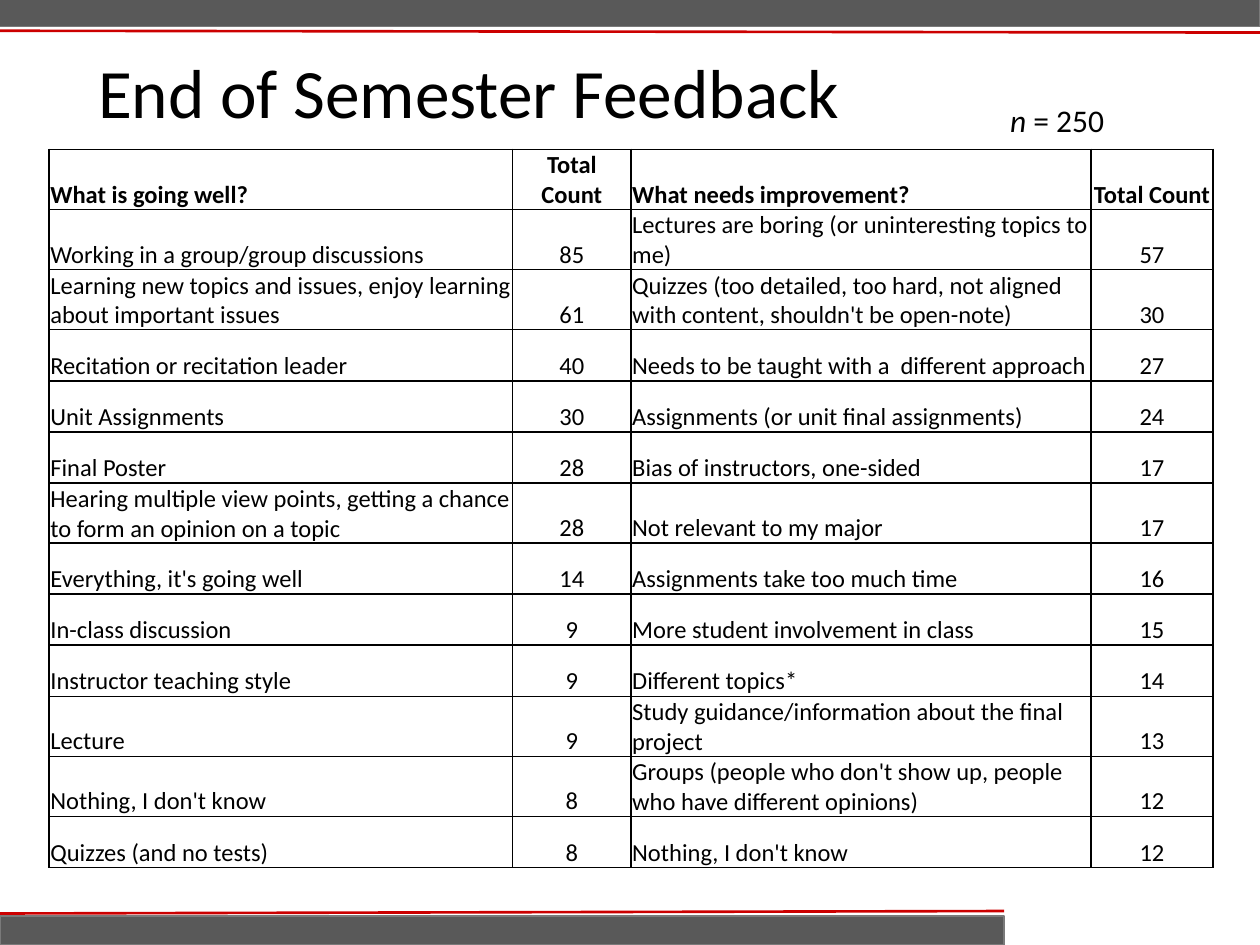
import pptx
import pptx.dml.color
import pptx.enum.shapes
import pptx.enum.text
import pptx.oxml
import pptx.oxml.ns
import pptx.util

Pt = pptx.util.Pt
ALIGN = pptx.enum.text.PP_ALIGN
ANCHOR = pptx.enum.text.MSO_ANCHOR

COLORS = {"text": "000000", "border": "000000", "band": "595959",
          "band_edge": "7A7A7A", "rule": "CC0000"}
FONT = "Calibri"

TITLE = "End of Semester Feedback"
SAMPLE_SIZE = [("n", True), (" = 250", False)]  # (text, italic)
FEEDBACK = [
    ("What is going well?", "Total Count", "What needs improvement?", "Total Count"),
    ("Working in a group/group discussions", 85,
     "Lectures are boring (or uninteresting topics to me)", 57),
    ("Learning new topics and issues, enjoy learning about important issues", 61,
     "Quizzes (too detailed, too hard, not aligned with content, shouldn't be open-note)", 30),
    ("Recitation or recitation leader", 40,
     "Needs to be taught with a  different approach", 27),
    ("Unit Assignments", 30, "Assignments (or unit final assignments)", 24),
    ("Final Poster", 28, "Bias of instructors, one-sided", 17),
    ("Hearing multiple view points, getting a chance to form an opinion on a topic", 28,
     "Not relevant to my major", 17),
    ("Everything, it's going well", 14, "Assignments take too much time", 16),
    ("In-class discussion", 9, "More student involvement in class", 15),
    ("Instructor teaching style", 9, "Different topics*", 14),
    ("Lecture", 9, "Study guidance/information about the final project", 13),
    ("Nothing, I don't know", 8,
     "Groups (people who don't show up, people who have different opinions)", 12),
    ("Quizzes (and no tests)", 8, "Nothing, I don't know", 12),
]
COLUMN_WIDTHS = [264.9, 67.6, 262.8, 69.8]
ROW_HEIGHT = 29.2
TABLE_LEFT, TABLE_TOP = 28.1, 85.4

BANDS = [(0, 523.4, 573.8, 16.6), (-0.7, -1.4, 720.7, 16.6)]  # left, top, width, height
RULES = [(-0.7, 522, 573.8, 520.6), (-0.7, 17.6, 720, 18.6)]  # from x, y to x, y


def color(name):
    return pptx.dml.color.RGBColor.from_string(COLORS[name])


def write(frame, runs, size, align=ALIGN.LEFT, bold=False, line_spacing=None):
    """Fill the first paragraph; runs is a string or (text, italic) pairs."""
    paragraph = frame.paragraphs[0]
    paragraph.alignment = align
    if line_spacing:
        paragraph.line_spacing = line_spacing
    for text, italic in [(runs, False)] if isinstance(runs, str) else runs:
        run = paragraph.add_run()
        run.text = text
        run.font.name, run.font.size = FONT, Pt(size)
        run.font.bold, run.font.italic = bold, italic
        run.font.color.rgb = color("text")


def add_band(slide, box):
    band = slide.shapes.add_shape(pptx.enum.shapes.MSO_SHAPE.RECTANGLE, *map(Pt, box))
    band.shadow.inherit = False
    band.fill.solid()
    band.fill.fore_color.rgb = color("band")
    band.line.color.rgb = color("band_edge")
    band.line.width = Pt(1)


def add_rule(slide, ends):
    rule = slide.shapes.add_connector(pptx.enum.shapes.MSO_CONNECTOR.STRAIGHT, *map(Pt, ends))
    rule.line.color.rgb = color("rule")
    rule.line.width = Pt(1.5)
    rule._element.spPr.append(pptx.oxml.parse_xml(
        f"<a:effectLst {pptx.oxml.ns.nsdecls('a')}/>"))


def add_borders(cell):
    properties = cell._tc.get_or_add_tcPr()
    for index, side in enumerate(("lnL", "lnR", "lnT", "lnB")):
        properties.insert(index, pptx.oxml.parse_xml(
            f'<a:{side} {pptx.oxml.ns.nsdecls("a")} w="{Pt(1)}"><a:solidFill>'
            f'<a:srgbClr val="{COLORS["border"]}"/></a:solidFill></a:{side}>'))


def add_feedback_table(slide):
    table = slide.shapes.add_table(
        len(FEEDBACK), len(COLUMN_WIDTHS), Pt(TABLE_LEFT), Pt(TABLE_TOP),
        Pt(sum(COLUMN_WIDTHS)), Pt(ROW_HEIGHT * len(FEEDBACK))).table
    table.horz_banding = False
    for column, width in zip(table.columns, COLUMN_WIDTHS):
        column.width = Pt(width)
    for r, entries in enumerate(FEEDBACK):
        table.rows[r].height = Pt(ROW_HEIGHT)
        for c, entry in enumerate(entries):
            cell = table.cell(r, c)
            cell.margin_left = cell.margin_right = cell.margin_top = Pt(0.7)
            cell.margin_bottom = 0
            cell.vertical_anchor = ANCHOR.BOTTOM
            cell.fill.background()
            add_borders(cell)
            write(cell.text_frame, str(entry), size=14, bold=r == 0,
                  align=ALIGN.CENTER if c % 2 else ALIGN.LEFT)


def main():
    deck = pptx.Presentation()
    deck.slide_width, deck.slide_height = Pt(720), Pt(540)
    slide = deck.slides.add_slide(deck.slide_layouts[6])

    for band, rule in zip(BANDS, RULES):
        add_band(slide, band)
        add_rule(slide, rule)

    title = slide.shapes.add_textbox(Pt(49), Pt(30.2), Pt(620.6), Pt(49)).text_frame
    title.word_wrap = True
    title.vertical_anchor = ANCHOR.MIDDLE
    write(title, TITLE, size=39.6, line_spacing=0.9)

    add_feedback_table(slide)

    sample = slide.shapes.add_textbox(Pt(570.2), Pt(54), Pt(69.8), Pt(29)).text_frame
    sample.word_wrap = False
    sample.auto_size = pptx.enum.text.MSO_AUTO_SIZE.SHAPE_TO_FIT_TEXT
    write(sample, SAMPLE_SIZE, size=18)

    deck.save("out.pptx")


if __name__ == "__main__":
    main()
